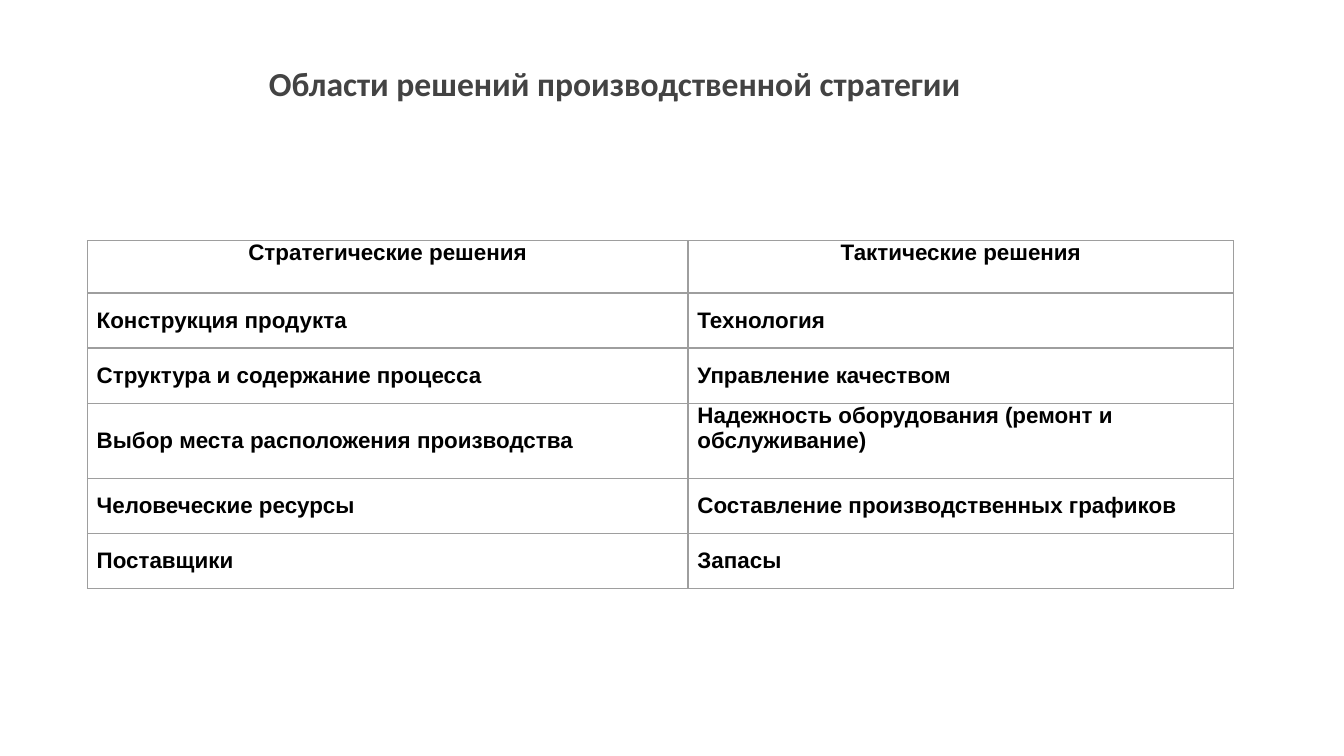
from dataclasses import dataclass

from lxml.etree import SubElement
from pptx import Presentation
from pptx.dml.color import RGBColor
from pptx.enum.text import MSO_ANCHOR as Anchor, PP_ALIGN as Align
from pptx.oxml.ns import qn
from pptx.slide import Slide
from pptx.table import _Cell as Cell
from pptx.text.text import _Paragraph as Paragraph
from pptx.util import Inches, Pt


@dataclass(frozen=True)
class Theme:
    title_font: str = "Calibri"
    table_font: str = "Arial"
    title_size: int = 18
    table_size: int = 12
    title_color: str = "434343"
    text_color: str = "000000"
    cell_color: str = "FFFFFF"
    border_color: str = "9E9E9E"
    border_width: float = 0.75


@dataclass(frozen=True)
class DecisionRow:
    strategic: str
    tactical: str
    height: float = 0.41
    align: Align = Align.LEFT
    strategic_anchor: Anchor = Anchor.MIDDLE
    tactical_anchor: Anchor = Anchor.MIDDLE


THEME = Theme()
COLUMN_WIDTHS = (4.47, 4.06)
ROWS = (
    DecisionRow("Стратегические решения", "Тактические решения", 0.39,
                Align.CENTER, Anchor.TOP, Anchor.TOP),
    DecisionRow("Конструкция продукта", "Технология"),
    DecisionRow("Структура и содержание процесса", "Управление качеством"),
    DecisionRow("Выбор места расположения производства",
                "Надежность оборудования (ремонт и обслуживание)", 0.56,
                tactical_anchor=Anchor.TOP),
    DecisionRow("Человеческие ресурсы", "Составление производственных графиков"),
    DecisionRow("Поставщики", "Запасы"),
)


def style_paragraph(para: Paragraph, name: str, size: int, color: str, align: Align) -> None:
    para.alignment = align
    para.font.name = name
    para.font.size = Pt(size)
    para.font.bold = True
    para.font.color.rgb = RGBColor.from_string(color)


def add_borders(cell: Cell) -> None:
    properties = cell._tc.get_or_add_tcPr()
    for position, side in enumerate(("lnL", "lnR", "lnT", "lnB")):
        line = properties.makeelement(qn(f"a:{side}"), {"w": str(Pt(THEME.border_width))})
        fill = SubElement(line, qn("a:solidFill"))
        SubElement(fill, qn("a:srgbClr"), val=THEME.border_color)
        properties.insert(position, line)


def fill_cell(cell: Cell, text: str, align: Align, anchor: Anchor) -> None:
    cell.text = text
    cell.vertical_anchor = anchor
    cell.margin_left = cell.margin_right = Inches(0.07)
    cell.margin_top = cell.margin_bottom = 0
    cell.fill.solid()
    cell.fill.fore_color.rgb = RGBColor.from_string(THEME.cell_color)
    style_paragraph(cell.text_frame.paragraphs[0], THEME.table_font,
                    THEME.table_size, THEME.text_color, align)
    add_borders(cell)


def add_title(page: Slide, text: str) -> None:
    title = page.shapes.title
    title.left, title.top = Inches(0.65), Inches(0.37)
    title.width, title.height = Inches(7.85), Inches(0.51)
    frame = title.text_frame
    frame.text = text
    frame.word_wrap = True
    frame.vertical_anchor = Anchor.TOP
    frame.margin_left = frame.margin_right = Inches(0.1)
    frame.margin_top = frame.margin_bottom = Inches(0.1)
    style_paragraph(frame.paragraphs[0], THEME.title_font, THEME.title_size,
                    THEME.title_color, Align.CENTER)


def add_decision_table(page: Slide) -> None:
    table = page.shapes.add_table(
        len(ROWS), len(COLUMN_WIDTHS), Inches(0.65), Inches(1.79),
        Inches(sum(COLUMN_WIDTHS)), Inches(sum(row.height for row in ROWS)),
    ).table
    table.first_row = False
    table.horz_banding = False
    for column, width in zip(table.columns, COLUMN_WIDTHS):
        column.width = Inches(width)
    for index, row in enumerate(ROWS):
        table.rows[index].height = Inches(row.height)
        fill_cell(table.cell(index, 0), row.strategic, row.align, row.strategic_anchor)
        fill_cell(table.cell(index, 1), row.tactical, row.align, row.tactical_anchor)


def main() -> None:
    deck = Presentation()
    deck.slide_width = Inches(10)
    deck.slide_height = deck.slide_width * 9 // 16
    page = deck.slides.add_slide(deck.slide_layouts[5])
    add_title(page, "Области решений производственной стратегии")
    add_decision_table(page)
    deck.save("out.pptx")


if __name__ == "__main__":
    main()
